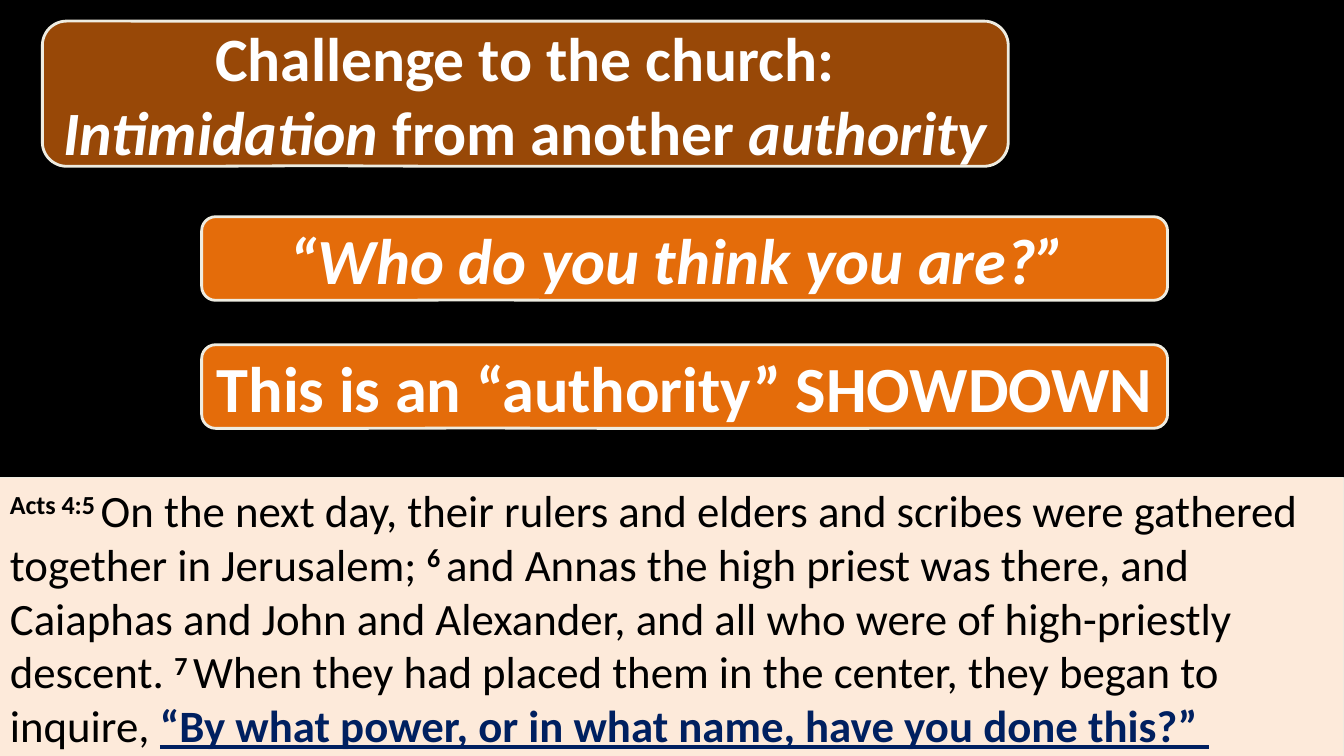
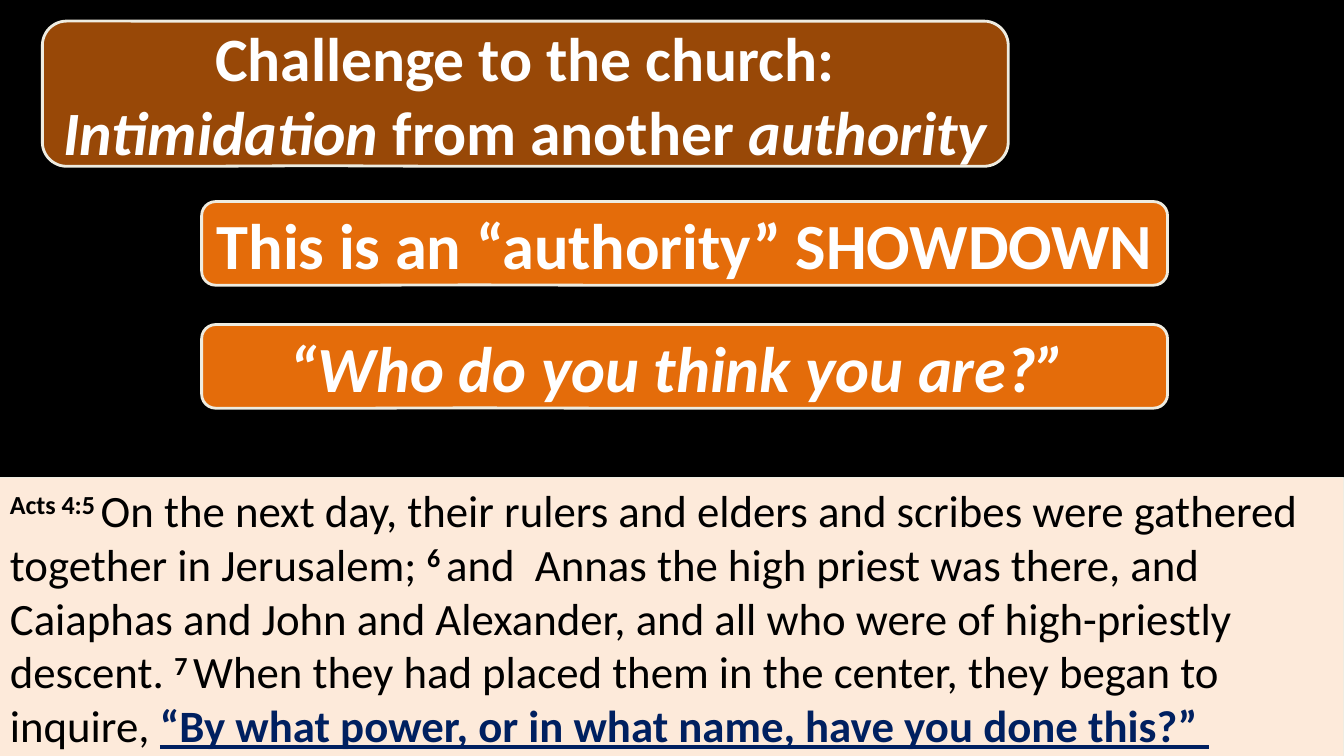
from dataclasses import dataclass

from pptx import Presentation
from pptx.dml.color import RGBColor
from pptx.enum.shapes import MSO_SHAPE
from pptx.enum.text import MSO_ANCHOR, PP_ALIGN
from pptx.util import Inches, Pt


@dataclass(frozen=True)
class Theme:
    font: str = "Calibri"
    background: str = "000000"
    header: str = "984807"
    callout: str = "E46C0A"
    passage: str = "FDEADA"
    outline: str = "EEECE1"
    light_text: str = "FFFFFF"
    dark_text: str = "000000"
    quote: str = "002060"
    header_size: int = 44
    callout_size: int = 46
    passage_size: int = 32


THEME = Theme()
SLIDE_WIDTH, SLIDE_HEIGHT = 13.33, 7.5
BANNER_WIDTH = 9.58
CALLOUT_LEFT, CALLOUT_HEIGHT = 2, 0.83
HEADER_BOX = (0.42, 0.21, BANNER_WIDTH, 1.44)
PASSAGE_BOX = (0, 4.74, SLIDE_WIDTH, 2.77)
CALLOUT_TAIL = (-0.219, 0.496, 0.167)

HEADER = [
    [("Challenge to the church:", "")],
    [("Intimidation", "italic"), (" from another ", ""), ("authority", "italic")],
]
SHOWDOWN = [[("This is an “authority” SHOWDOWN", "")]]
WHO = [[("“Who do you think you are?” ", "italic")]]


def passage_text(annas):
    return [[
        ("Acts 4:5 ", "verse"),
        ("On the next day, their rulers and elders and scribes were gathered "
         "together in Jerusalem; ", ""),
        ("6 ", "verse"),
        (f"{annas} the high priest was there, and Caiaphas and John and "
         "Alexander, and all who were of high-priestly descent. ", ""),
        ("7 ", "verse"),
        ("When they had placed them in the center, they began to inquire, ", ""),
        ("“By what power, or in what name, have you done this?” ", "quote"),
    ]]


def rgb(color):
    return RGBColor.from_string(color)


def add_panel(slide, preset, box, fill, line_width):
    panel = slide.shapes.add_shape(preset, *(Inches(length) for length in box))
    panel.shadow.inherit = False
    panel.fill.solid()
    panel.fill.fore_color.rgb = rgb(fill)
    panel.line.color.rgb = rgb(THEME.outline)
    panel.line.width = Pt(line_width)
    panel.text_frame.word_wrap = True
    return panel


def style_run(run, style):
    """Apply italic, verse (raised bold number) or quote emphasis."""
    if style == "italic":
        run.font.italic = True
    elif style == "verse":
        run.font.bold = True
        run._r.get_or_add_rPr().set("baseline", "30000")
    elif style == "quote":
        run.font.bold = True
        run.font.underline = True
        run.font.color.rgb = rgb(THEME.quote)


def write(frame, lines, size, color, align, bold):
    for index, line in enumerate(lines):
        paragraph = frame.add_paragraph() if index else frame.paragraphs[0]
        paragraph.alignment = align
        paragraph.font.name = THEME.font
        paragraph.font.size = Pt(size)
        paragraph.font.bold = bold
        paragraph.font.color.rgb = rgb(color)
        for text, style in line:
            run = paragraph.add_run()
            run.text = text
            style_run(run, style)


def add_banner(slide, box, lines, fill, size):
    banner = add_panel(slide, MSO_SHAPE.ROUNDED_RECTANGULAR_CALLOUT, box, fill, 2)
    for index, value in enumerate(CALLOUT_TAIL):
        banner.adjustments[index] = value
    banner.text_frame.vertical_anchor = MSO_ANCHOR.MIDDLE
    write(banner.text_frame, lines, size, THEME.light_text, PP_ALIGN.CENTER, True)


def add_passage(slide, box, lines):
    passage = add_panel(slide, MSO_SHAPE.RECTANGLE, box, THEME.passage, 0.75)
    passage.text_frame.vertical_anchor = MSO_ANCHOR.TOP
    write(passage.text_frame, lines, THEME.passage_size, THEME.dark_text,
          PP_ALIGN.LEFT, False)


def add_challenge_slide(deck, callouts, annas):
    """Build a slide from (top, lines) callouts and the wording before the priest."""
    slide = deck.slides.add_slide(deck.slide_layouts[6])
    slide.background.fill.solid()
    slide.background.fill.fore_color.rgb = rgb(THEME.background)
    add_passage(slide, PASSAGE_BOX, passage_text(annas))
    add_banner(slide, HEADER_BOX, HEADER, THEME.header, THEME.header_size)
    for top, lines in callouts:
        box = (CALLOUT_LEFT, top, BANNER_WIDTH, CALLOUT_HEIGHT)
        add_banner(slide, box, lines, THEME.callout, THEME.callout_size)


def main():
    deck = Presentation()
    deck.slide_width = Inches(SLIDE_WIDTH)
    deck.slide_height = Inches(SLIDE_HEIGHT)
    add_challenge_slide(deck, [(3.42, SHOWDOWN), (2.15, WHO)], "and Annas")
    add_challenge_slide(deck, [(2, SHOWDOWN), (3.22, WHO)], "and  Annas")
    deck.save("out.pptx")


if __name__ == "__main__":
    main()
